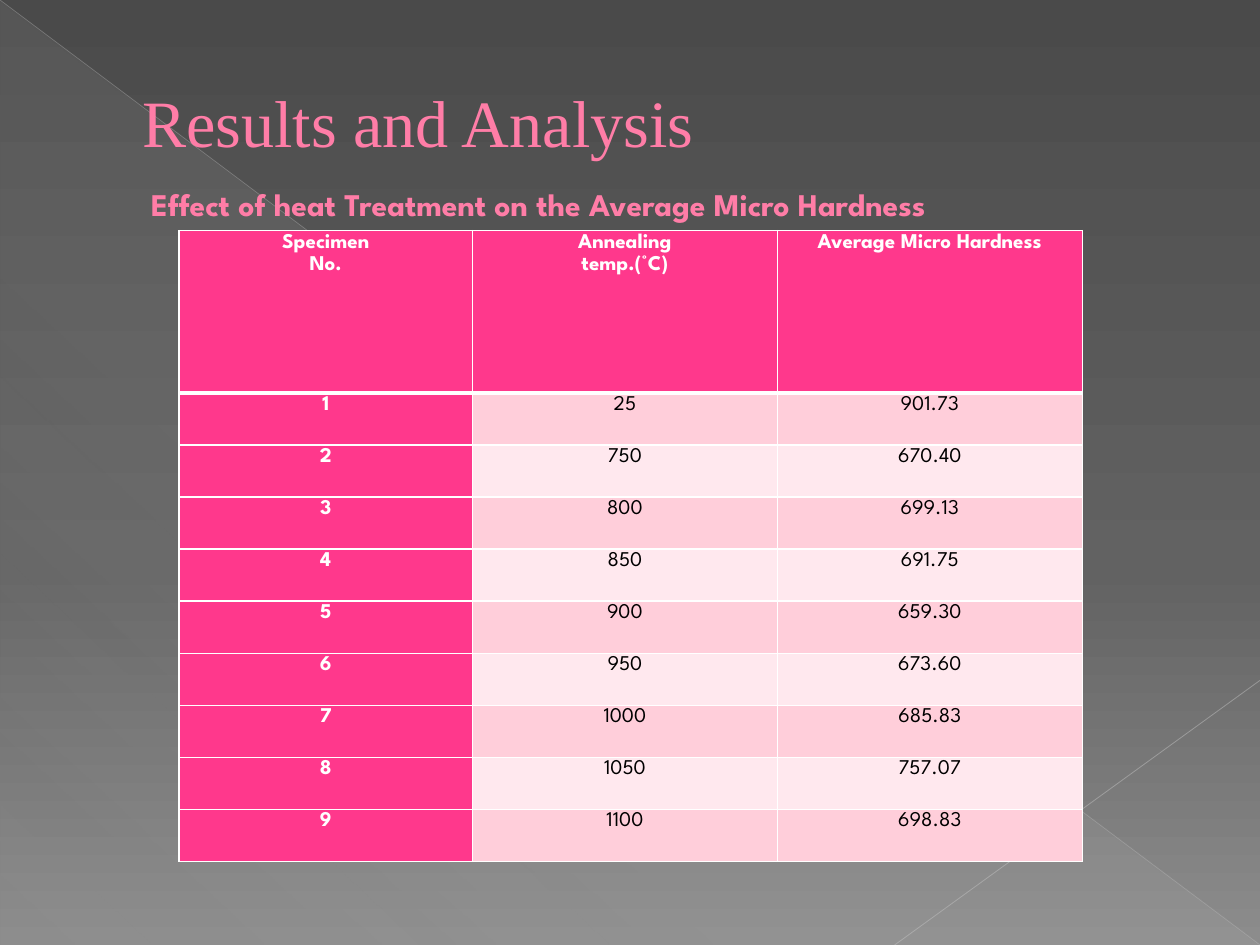
from lxml.etree import SubElement
from pptx import Presentation
from pptx.dml.color import RGBColor
from pptx.enum.shapes import MSO_CONNECTOR, MSO_SHAPE
from pptx.enum.text import MSO_ANCHOR, MSO_AUTO_SIZE, PP_ALIGN
from pptx.oxml.ns import qn
from pptx.util import Inches, Pt

WIDTH, HEIGHT = 10, 7.5
COLORS = {
    "top": "4A4A4A", "middle": "626262", "bottom": "8C8C8C",
    "sheen": "D2D2D2", "diagonal": "BFBFBF", "corner": "C6C6C6",
    "title": "FF7DA7", "accent": "FF388C", "odd": "FFCEDA",
    "even": "FFE8EE", "white": "FFFFFF", "black": "000000",
}
HEADINGS = [["Specimen", "No."], ["Annealing", "temp.(°C)"], ["Average Micro Hardness"]]
TEMPERATURES = [25, 750, 800, 850, 900, 950, 1000, 1050, 1100]
HARDNESS = [901.73, 670.40, 699.13, 691.75, 659.30, 673.60, 685.83, 757.07, 698.83]


def add_color(parent, name, opacity=100):
    color = SubElement(parent, qn("a:srgbClr"), val=COLORS[name])
    if opacity < 100:
        SubElement(color, qn("a:alpha"), val=str(opacity * 1000))


class SlideBuilder:
    heading_font = "Times New Roman"
    body_font = "League Spartan"

    def __init__(self, presentation):
        self.slide = presentation.slides.add_slide(presentation.slide_layouts[5])

    def box(self, left, top, width, height):
        return (Inches(left * WIDTH), Inches(top * HEIGHT),
                Inches(width * WIDTH), Inches(height * HEIGHT))

    def gradient(self, properties, stops, angle):
        solid = properties.find(qn("a:solidFill"))
        fill = SubElement(properties, qn("a:gradFill"), rotWithShape="1")
        stop_list = SubElement(fill, qn("a:gsLst"))
        for position, name, opacity in stops:
            stop = SubElement(stop_list, qn("a:gs"), pos=str(position * 1000))
            add_color(stop, name, opacity)
        SubElement(fill, qn("a:lin"), ang=str(angle * 60000), scaled="0")
        properties.replace(solid, fill)

    def background(self, stops, angle):
        self.slide.background.fill.solid()
        self.gradient(self.slide.background._cSld.bg.bgPr, stops, angle)

    def triangle(self, box, stops, angle):
        shape = self.slide.shapes.add_shape(MSO_SHAPE.RIGHT_TRIANGLE, *self.box(*box))
        shape.shadow.inherit = False
        shape.line.fill.background()
        shape.fill.solid()
        self.gradient(shape._element.spPr, stops, angle)

    def line(self, start, end, color, width, opacity):
        connector = self.slide.shapes.add_connector(
            MSO_CONNECTOR.STRAIGHT, *self.box(*start, *end))
        connector.line.width = Pt(width)
        connector.line.color.rgb = RGBColor.from_string(COLORS[color])
        properties = connector._element.spPr
        for shade in properties.iter(qn("a:srgbClr")):
            SubElement(shade, qn("a:alpha"), val=str(opacity * 1000))
        SubElement(properties, qn("a:effectLst"))

    def run(self, paragraph, text, size, font, color, bold=False):
        run = paragraph.add_run()
        run.text = text
        run.font.size = Pt(size)
        run.font.name = font
        run.font.bold = bold
        run.font.color.rgb = RGBColor.from_string(COLORS[color])

    def title(self, box, heading, subtitle):
        shape = self.slide.shapes.title
        shape.left, shape.top, shape.width, shape.height = self.box(*box)
        frame = shape.text_frame
        frame.word_wrap = True
        frame.auto_size = MSO_AUTO_SIZE.NONE
        frame.vertical_anchor = MSO_ANCHOR.MIDDLE
        paragraph = frame.paragraphs[0]
        paragraph.alignment = PP_ALIGN.LEFT
        paragraph.line_spacing = 1.5
        properties = paragraph._p.get_or_add_pPr()
        properties.set("marL", str(Inches(0.53)))
        properties.set("indent", "0")
        self.run(paragraph, heading, 37.8, self.heading_font, "title")
        paragraph.add_line_break()
        self.run(paragraph, " ", 19.8, self.heading_font, "title")
        self.run(paragraph, subtitle, 18, self.body_font, "title", True)
        shapes = self.slide.shapes._spTree
        shapes.append(shape._element)

    def cell(self, cell, lines, fill, color, bold, top, bottom):
        cell.fill.solid()
        cell.fill.fore_color.rgb = RGBColor.from_string(COLORS[fill])
        cell.margin_left = cell.margin_right = Inches(0.07)
        cell.margin_top = cell.margin_bottom = 0
        frame = cell.text_frame
        for index, text in enumerate(lines):
            paragraph = frame.add_paragraph() if index else frame.paragraphs[0]
            paragraph.alignment = PP_ALIGN.CENTER
            paragraph.line_spacing = 1.15
            self.run(paragraph, text, 12, self.body_font, color, bold)
        properties = cell._tc.get_or_add_tcPr()
        for index, (side, width) in enumerate(
                [("lnL", 1), ("lnR", 1), ("lnT", top), ("lnB", bottom)]):
            border = SubElement(properties, qn(f"a:{side}"), w=str(Pt(width)))
            add_color(SubElement(border, qn("a:solidFill")), "white")
            properties.insert(index, border)

    def table(self, box, rows, widths, heights):
        frame = self.slide.shapes.add_table(len(rows), len(widths), *self.box(*box))
        table = frame.table
        for column, width in zip(table.columns, widths):
            column.width = Inches(width)
        for row, height in zip(table.rows, heights):
            row.height = Inches(height)
        for row_index, row in enumerate(rows):
            for column_index, lines in enumerate(row):
                strong = row_index == 0 or column_index == 0
                band = "odd" if row_index % 2 else "even"
                self.cell(table.cell(row_index, column_index), lines,
                          "accent" if strong else band,
                          "white" if strong else "black", strong,
                          3 if row_index == 1 else 1, 3 if row_index == 0 else 1)


def main():
    presentation = Presentation()
    presentation.slide_width = Inches(WIDTH)
    presentation.slide_height = Inches(HEIGHT)
    builder = SlideBuilder(presentation)
    builder.background([(0, "top", 100), (60, "middle", 100), (100, "bottom", 100)], 90)
    builder.triangle((0, 0, 1, 1),
                     [(0, "sheen", 10), (70, "sheen", 8), (100, "sheen", 1)], 133)
    builder.line((0, 0), (1, 1), "diagonal", 0.39, 35)
    builder.line((1, 0.72), (0.71, 1), "corner", 0.47, 45)
    builder.title((0.05, 0.04, 0.9, 0.2), "Results and Analysis",
                  "Effect of heat Treatment on the Average Micro Hardness")
    measurements = zip(TEMPERATURES, HARDNESS)
    rows = [HEADINGS] + [
        [[str(number)], [str(temperature)], [f"{hardness:.2f}"]]
        for number, (temperature, hardness) in enumerate(measurements, 1)]
    heights = [1.29] + [0.413] * len(TEMPERATURES)
    builder.table((0.142, 0.244, 0.717, 0.67), rows, [2.33, 2.42, 2.42], heights)
    presentation.save("out.pptx")


if __name__ == "__main__":
    main()
